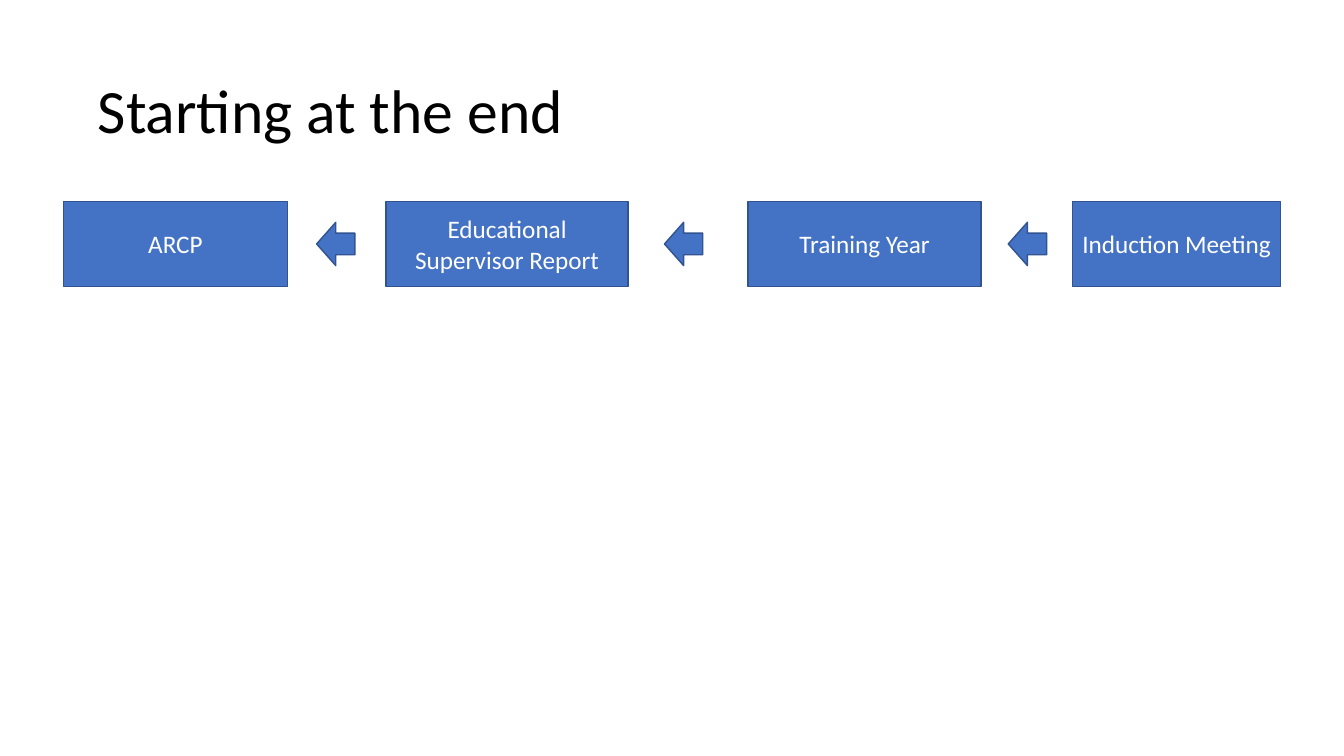
import pptx
import pptx.dml.color
import pptx.enum.shapes
import pptx.enum.text
import pptx.util

TITLE = "Starting at the end"
TITLE_BOX = (92, 40, 1150, 145)
# Label, left and width of each stage
STAGES = [
    ("ARCP", 63, 222),
    ("Educational Supervisor Report", 383, 240),
    ("Training Year", 742, 231),
    ("Induction Meeting", 1064, 206),
]
ARROW_LEFTS = [314, 659, 1000]

SLIDE_SIZE = (1333, 750)
STAGE_TOP, STAGE_HEIGHT = 200, 84
ARROW_WIDTH, ARROW_HEIGHT = 38, 43
INSET = 5
FONT = "Calibri"
COLORS = {"title": "000000", "label": "FFFFFF", "fill": "4472C4", "line": "32538F"}
ALIGN = pptx.enum.text.PP_ALIGN
SHAPES = pptx.enum.shapes.MSO_SHAPE


def px(length):
    """Convert px, at 100 to the inch, to EMU."""
    return pptx.util.Emu(round(length * 9144))


def color(name):
    return pptx.dml.color.RGBColor.from_string(COLORS[name])


def write_text(shape, text, *, size, color_name, align, line_spacing=1.0):
    frame = shape.text_frame
    frame.word_wrap = True
    frame.vertical_anchor = pptx.enum.text.MSO_ANCHOR.MIDDLE
    frame.margin_left = frame.margin_right = px(INSET)
    frame.margin_top = frame.margin_bottom = px(INSET)
    paragraph = frame.paragraphs[0]
    paragraph.alignment = align
    paragraph.line_spacing = line_spacing
    run = paragraph.add_run()
    run.text = text
    run.font.name = FONT
    run.font.size = pptx.util.Pt(size)
    run.font.color.rgb = color(color_name)


def add_block(slide, kind, *box):
    shape = slide.shapes.add_shape(kind, *map(px, box))
    shape.shadow.inherit = False
    shape.fill.solid()
    shape.fill.fore_color.rgb = color("fill")
    shape.line.color.rgb = color("line")
    shape.line.width = pptx.util.Pt(1)
    return shape


def main():
    presentation = pptx.Presentation()
    presentation.slide_width, presentation.slide_height = map(px, SLIDE_SIZE)
    slide = presentation.slides.add_slide(presentation.slide_layouts[6])

    title = slide.shapes.add_textbox(*map(px, TITLE_BOX))
    write_text(title, TITLE, size=44, color_name="title", align=ALIGN.LEFT, line_spacing=0.9)

    for label, left, width in STAGES:
        stage = add_block(slide, SHAPES.RECTANGLE, left, STAGE_TOP, width, STAGE_HEIGHT)
        write_text(stage, label, size=18, color_name="label", align=ALIGN.CENTER)

    arrow_top = STAGE_TOP + (STAGE_HEIGHT - ARROW_HEIGHT) / 2
    for left in ARROW_LEFTS:
        arrow = add_block(slide, SHAPES.RIGHT_ARROW, left, arrow_top, ARROW_WIDTH, ARROW_HEIGHT)
        arrow.rotation = 180

    presentation.save("out.pptx")


if __name__ == "__main__":
    main()
